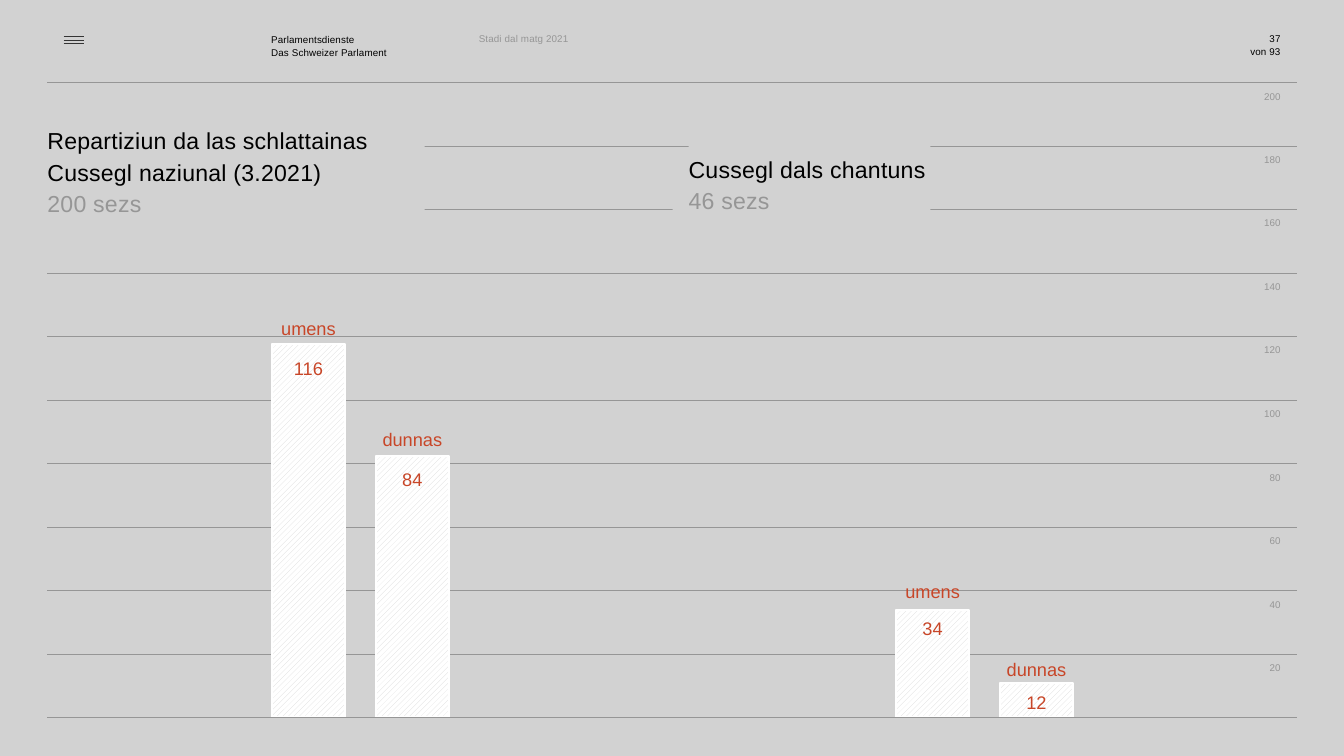
from lxml import etree
from pptx import Presentation
from pptx.dml.color import RGBColor as RGB
from pptx.enum.dml import MSO_PATTERN as Pat
from pptx.enum.shapes import MSO_CONNECTOR as Link, MSO_SHAPE as Kind
from pptx.enum.text import MSO_ANCHOR as Anchor, PP_ALIGN as Align
from pptx.oxml.ns import qn
from pptx.util import Inches, Pt

HUES = {"back": "D2D2D2", "ink": "000000", "menu": "343434", "grey": "969696",
        "red": "C84628", "white": "FFFFFF", "hatch": "D9D9D9"}
SMALL = {"size": Pt(7), "name": "Arial"}
LABEL = {"size": Pt(13), "name": "Arial"}
TITLE = {"size": Pt(16.5), "name": "Arial"}

deck = Presentation()
deck.slide_width, deck.slide_height = Inches(13.33), Inches(7.5)
COL, ROW = deck.slide_width / 100, deck.slide_height / 100
slide = deck.slides.add_slide(deck.slide_layouts[6])
shapes = slide.shapes


def hue(key):
    return RGB.from_string(HUES[key])


def span(x, y, w, h):
    return int(x * COL), int(y * ROW), int(w * COL), int(h * ROW)


def text(box, lines, form, align=Align.LEFT, lead=None, gap=0, space=0, inset=0):
    frame = shapes.add_textbox(*span(*box)).text_frame
    setup = {"word_wrap": True, "vertical_anchor": Anchor.TOP, "margin_left": 0,
             "margin_right": 0, "margin_top": int(inset * ROW), "margin_bottom": 0}
    for key, val in setup.items():
        setattr(frame, key, val)
    for i, (words, tone) in enumerate(lines):
        para = frame.add_paragraph() if i else frame.paragraphs[0]
        para.alignment, para.line_spacing = align, lead
        if i and gap:
            para.space_before = Pt(gap)
        run = para.add_run()
        run.text = words
        for key, val in form.items():
            setattr(run.font, key, val)
        run.font.color.rgb = hue(tone)
        if space:
            run.font._element.set("spc", str(space))


def rule(x, y, w, tone, size):
    left, top, wide, _ = span(x, y, w, 0)
    line = shapes.add_connector(Link.STRAIGHT, left, top, left + wide, top)
    line.line.color.rgb = hue(tone)
    line.line.width = Pt(size)
    etree.SubElement(line._element.spPr, qn("a:effectLst"))


def block(box):
    rect = shapes.add_shape(Kind.RECTANGLE, *span(*box))
    rect.shadow.inherit = False
    return rect


def mask(box):
    rect = block(box)
    rect.fill.solid()
    rect.fill.fore_color.rgb = hue("back")
    rect.line.fill.background()


def header(x, y, w):
    for i in range(3):
        rule(x + 1.2, y + 0.53 + i * 0.47, 1.5, "menu", 0.4)
    names = ["Parlamentsdienste", "Das Schweizer Parlament"]
    text((x + 16.65, y, 9.75, 3.47), [(n, "ink") for n in names], SMALL,
         lead=1.1, space=10)
    text((x + 32.1, y, 9.08, 1.6), [("Stadi dal matg 2021", "grey")], SMALL, space=10)
    for i, words in enumerate(["37", "von 93"]):
        text((x + w - 4.5, y + i * 1.73, 3.3, 1.6), [(words, "ink")], SMALL,
             Align.RIGHT, space=10)


def scale(x, y, w, step):
    for i in range(10):
        top = y + i * step
        rule(x, top, w, "grey", 0.25)
        text((x + w - 4.05, top + 1, 2.85, 1.6), [(str(200 - 20 * i), "grey")],
             SMALL, Align.RIGHT)


def title(box, lines, inset=0):
    mask(box)
    tones = ["ink"] * (len(lines) - 1) + ["grey"]
    text(box, zip(lines, tones), TITLE, lead=1.14, space=20, inset=inset)


def bars(x, base, items):
    for i, (name, count, high, lift, gap) in enumerate(items):
        left, top = x + i * 7.73, base - high
        rect = block((left, top, 5.4, high))
        rect.fill.patterned()
        rect.fill.pattern = Pat.WIDE_UPWARD_DIAGONAL
        rect.fill.fore_color.rgb = hue("hatch")
        rect.fill.back_color.rgb = hue("white")
        rect.line.color.rgb = hue("white")
        rect.line.width = Pt(1.5)
        text((left, top - lift, 5.4, 8.13), [(name, "red"), (str(count), "red")],
             LABEL, Align.CENTER, gap=gap)


def main():
    slide.background.fill.solid()
    slide.background.fill.fore_color.rgb = hue("back")
    edge, wide, top, step = 3.53, 92.94, 10.93, 8.4
    header(edge, 4.27, wide)
    scale(edge, top, wide, step)
    mask((2.93, 14.93, 20.56, 13.6))
    mask((50.04, 20.13, 10.05, 13.6))
    title((edge, 16.27, 28.06, 12.8),
          ["Repartiziun da las schlattainas", "Cussegl naziunal (3.2021)", "200 sezs"])
    title((51.24, 16.27, 18, 12.8), ["Cussegl dals chantuns", "46 sezs"], 3.73)
    base = 94.8
    bars(20.25, base, [("umens", 116, 49.33, 3.47, 13), ("dunnas", 84, 34.53, 3.6, 13)])
    bars(66.69, base, [("umens", 34, 14.13, 3.87, 10.8), ("dunnas", 12, 4.4, 3.33, 8)])
    rule(edge, top + 10 * step, wide, "grey", 1)
    deck.save("out.pptx")


if __name__ == "__main__":
    main()
